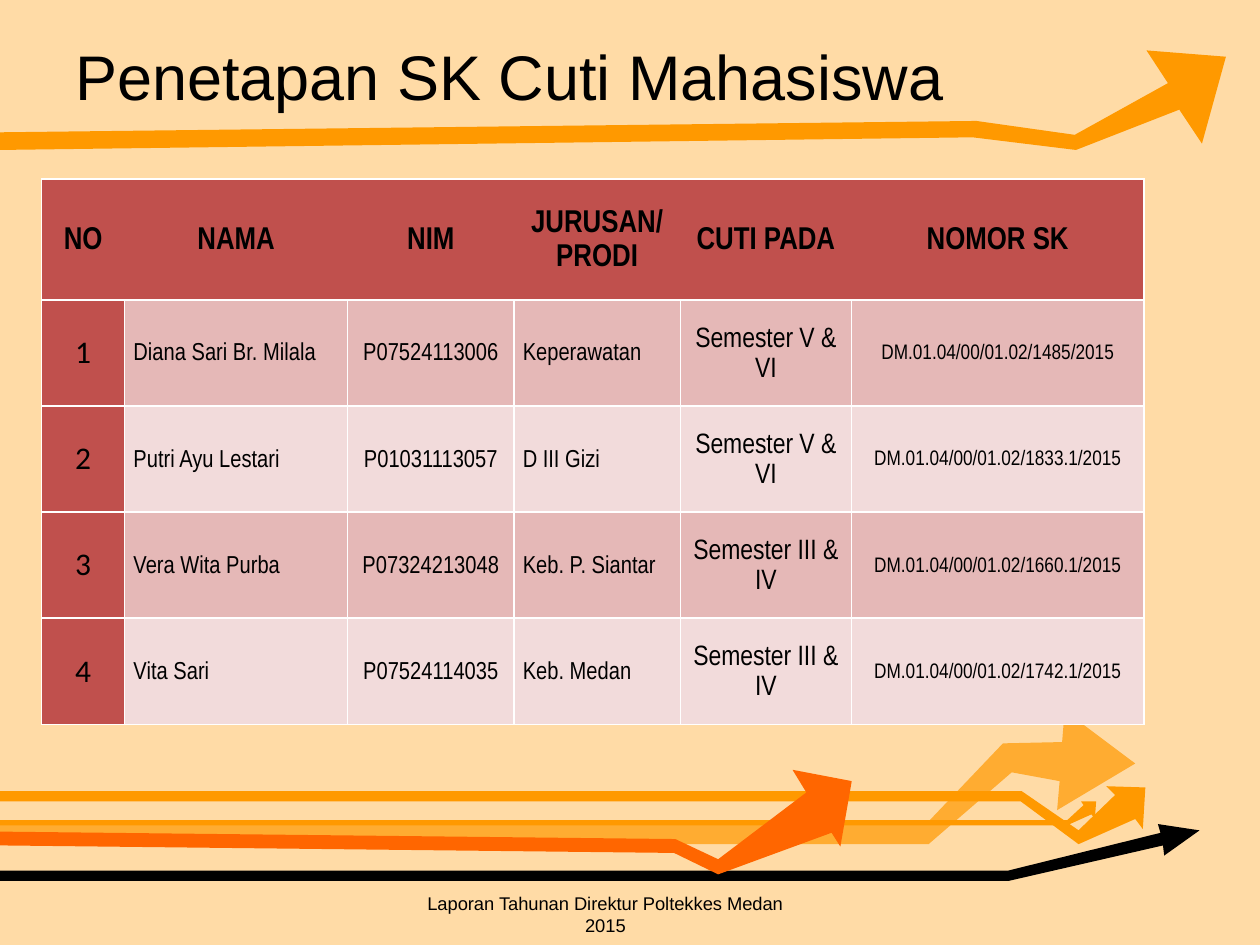
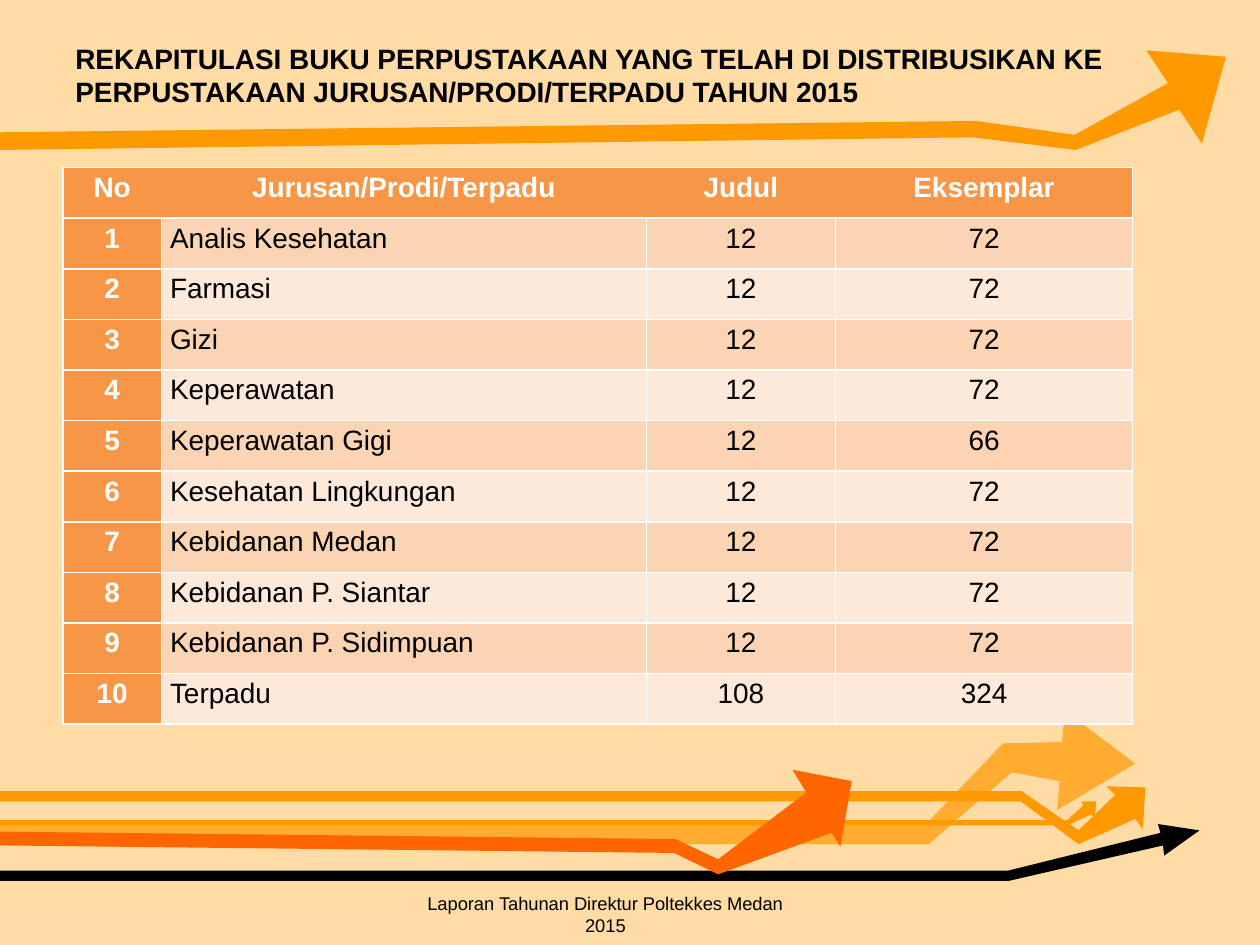
from lxml.etree import SubElement
from pptx import Presentation
from pptx.dml.color import RGBColor
from pptx.enum.text import MSO_ANCHOR, PP_ALIGN
from pptx.oxml.ns import qn
from pptx.util import Inches, Pt

# Colours
BLACK = RGBColor(0, 0, 0)
WHITE = RGBColor(255, 255, 255)
SAND = RGBColor(0xFF, 0xDB, 0xA6)
AMBER = RGBColor(0xFF, 0xAC, 0x31)
GOLD = RGBColor(0xFF, 0x99, 0x00)
FLAME = RGBColor(0xFF, 0x66, 0x00)
BRICK = RGBColor(0xC0, 0x50, 0x4D)
ROSE = RGBColor(0xE5, 0xB8, 0xB7)
BLUSH = RGBColor(0xF2, 0xDB, 0xDB)
ORANGE = RGBColor(0xF7, 0x96, 0x46)
PEACH = RGBColor(0xFB, 0xD4, 0xB4)
CREAM = RGBColor(0xFD, 0xE9, 0xD9)

LEFT, MID, JUST = PP_ALIGN.LEFT, PP_ALIGN.CENTER, PP_ALIGN.JUSTIFY
WIDE, HIGH = 10, 7.5
FOOT = "Laporan Tahunan Direktur Poltekkes Medan 2015"

# Arrow outlines, in hundredths of an inch, from back to front
ARROWS = [
    (AMBER, [(0, 653), (736, 653), (796, 590), (843, 589), (845, 564), (901, 606),
             (839, 643), (841, 620), (803, 613), (737, 670), (0, 670)]),
    (GOLD, [(0, 651), (847, 651), (860, 639), (858, 636), (870, 636), (869, 650),
            (866, 646), (867, 646), (847, 655), (0, 655)]),
    (GOLD, [(0, 628), (811, 628), (856, 659), (885, 631), (878, 624), (909, 625),
            (907, 658), (901, 650), (856, 670), (810, 636), (0, 636)]),
    (BLACK, [(0, 691), (800, 691), (921, 661), (919, 654), (952, 659), (924, 679),
             (923, 671), (801, 699), (0, 699)]),
    (FLAME, [(-5, 671), (535, 677), (570, 694), (660, 661), (667, 672), (676, 620),
             (629, 611), (640, 629), (570, 682), (536, 666), (-8, 660)]),
    (GOLD, [(0, 119), (772, 109), (854, 119), (936, 87), (954, 114), (973, 45),
            (910, 40), (927, 66), (853, 107), (775, 96), (0, 105)]),
]

# Rows of the tables; the first column is numbered by rule
LEAVE = [
    ("NAMA", "NIM", "JURUSAN/PRODI", "CUTI PADA", "NOMOR SK"),
    ("Diana Sari Br. Milala", "P07524113006", "Keperawatan",
     "Semester V & VI", "DM.01.04/00/01.02/1485/2015"),
    ("Putri Ayu Lestari", "P01031113057", "D III Gizi",
     "Semester V & VI", "DM.01.04/00/01.02/1833.1/2015"),
    ("Vera Wita Purba", "P07324213048", "Keb. P. Siantar",
     "Semester III & IV", "DM.01.04/00/01.02/1660.1/2015"),
    ("Vita Sari", "P07524114035", "Keb. Medan",
     "Semester III & IV", "DM.01.04/00/01.02/1742.1/2015"),
]
BOOKS = [
    ("Jurusan/Prodi/Terpadu", "Judul", "Eksemplar"),
    ("Analis Kesehatan", 12, 72),
    ("Farmasi", 12, 72),
    ("Gizi", 12, 72),
    ("Keperawatan", 12, 72),
    ("Keperawatan Gigi", 12, 66),
    ("Kesehatan Lingkungan", 12, 72),
    ("Kebidanan Medan", 12, 72),
    ("Kebidanan P. Siantar", 12, 72),
    ("Kebidanan P. Sidimpuan", 12, 72),
    ("Terpadu", 108, 324),
]

# Pages: top is the height of the top row, head its text style, cols the
# width, alignment, size and font of each column
PAGES = [
    dict(title="Penetapan SK Cuti Mahasiswa", size=36, bold=False,
         rows=LEAVE, first="NO", at=(0.33, 1.42), high=4.33, top=0.96,
         head=(18, "Arial Narrow", BLACK), numbold=False, anchor=MSO_ANCHOR.MIDDLE,
         fills=(BRICK, ROSE, BLUSH),
         cols=[(0.66, MID, 18, "Calibri"), (1.77, JUST, 14, "Arial Narrow"),
               (1.32, MID, 14, "Arial Narrow"), (1.32, JUST, 14, "Arial Narrow"),
               (1.36, MID, 16, "Arial Narrow"), (2.32, MID, 12, "Arial Narrow")]),
    # The long title is sized to two lines, clear of the top arrow
    dict(title="REKAPITULASI BUKU PERPUSTAKAAN YANG TELAH DI DISTRIBUSIKAN KE "
               "PERPUSTAKAAN JURUSAN/PRODI/TERPADU TAHUN 2015", size=16, bold=True,
         rows=BOOKS, first="No", at=(0.5, 1.33), high=4.42, top=4.42 / len(BOOKS),
         head=(16, "Arial", WHITE), numbold=True, anchor=MSO_ANCHOR.TOP,
         fills=(ORANGE, PEACH, CREAM),
         cols=[(0.78, MID, 16, "Arial"), (3.85, LEFT, 16, "Arial"),
               (1.5, MID, 16, "Arial"), (2.36, MID, 16, "Arial")]),
]


def write(frame, text, size, font, color=BLACK, bold=False, align=LEFT):
    frame.text = text
    frame.word_wrap = True
    para = frame.paragraphs[0]
    para.alignment = align
    face = para.runs[0].font
    face.size, face.name, face.bold = Pt(size), font, bold
    face.color.rgb = color
    return para


def box(slide, area, anchor, *style, **more):
    frame = slide.shapes.add_textbox(*map(Inches, area)).text_frame
    frame.vertical_anchor = anchor
    write(frame, *style, **more)


def arrow(slide, color, points):
    pen = slide.shapes.build_freeform(*points[0], scale=Inches(0.01))
    pen.add_line_segments(points[1:], close=True)
    shape = pen.convert_to_shape()
    shape.shadow.inherit = False
    shape.fill.solid()
    shape.fill.fore_color.rgb = color
    shape.line.fill.background()


def edges(cell, shown):
    props = cell._tc.get_or_add_tcPr()
    for side in "LRTB":
        line = SubElement(props, qn("a:ln" + side), w=str(Pt(1)))
        if side in shown:
            fill = SubElement(line, qn("a:solidFill"))
            SubElement(fill, qn("a:srgbClr"), val=str(WHITE))
        else:
            SubElement(line, qn("a:noFill"))


def grid(slide, page):
    rows, cols = page["rows"], page["cols"]
    tall, last = len(rows), len(cols) - 1
    wide = sum(col[0] for col in cols)
    area = (*page["at"], wide, page["high"])
    table = slide.shapes.add_table(tall, len(cols), *map(Inches, area)).table
    table.first_row = table.horz_banding = False
    for c, col in enumerate(cols):
        table.columns[c].width = Inches(col[0])
    step = (page["high"] - page["top"]) / (tall - 1)
    dark, odd, even = page["fills"]
    for r, row in enumerate(rows):
        table.rows[r].height = Inches(step if r else page["top"])
        for c, text in enumerate((r or page["first"], *row)):
            cell = table.cell(r, c)
            _, align, size, font = cols[c]
            color, bold = BLACK, False
            if r == 0:
                size, font, color = page["head"]
                align, bold = MID, True
            elif c == 0 and page["numbold"]:
                color, bold = page["head"][2], True
            # The top row has no lines between its cells
            sides = "LRTB" if r else "TB" + "L" * (c == 0) + "R" * (c == last)
            edges(cell, sides)
            cell.fill.solid()
            cell.fill.fore_color.rgb = dark if r * c == 0 else odd if r % 2 else even
            cell.margin_left = cell.margin_right = Inches(0.07)
            cell.margin_top = cell.margin_bottom = 0
            cell.vertical_anchor = page["anchor"]
            para = write(cell.text_frame, str(text), size, font, color, bold, align)
            if font != "Calibri":
                para.line_spacing = 1.15


def main():
    deck = Presentation()
    deck.slide_width, deck.slide_height = Inches(WIDE), Inches(HIGH)
    for page in PAGES:
        slide = deck.slides.add_slide(deck.slide_layouts[6])
        slide.background.fill.solid()
        slide.background.fill.fore_color.rgb = SAND
        for color, points in ARROWS:
            arrow(slide, color, points)
        box(slide, (0.5, 0.28, 9.07, 0.63), MSO_ANCHOR.MIDDLE,
            page["title"], page["size"], "Arial", bold=page["bold"])
        grid(slide, page)
        box(slide, (3.22, 7.03, 3.17, 0.31), MSO_ANCHOR.TOP,
            FOOT, 10.5, "Arial", align=MID)
    deck.save("out.pptx")


if __name__ == "__main__":
    main()
